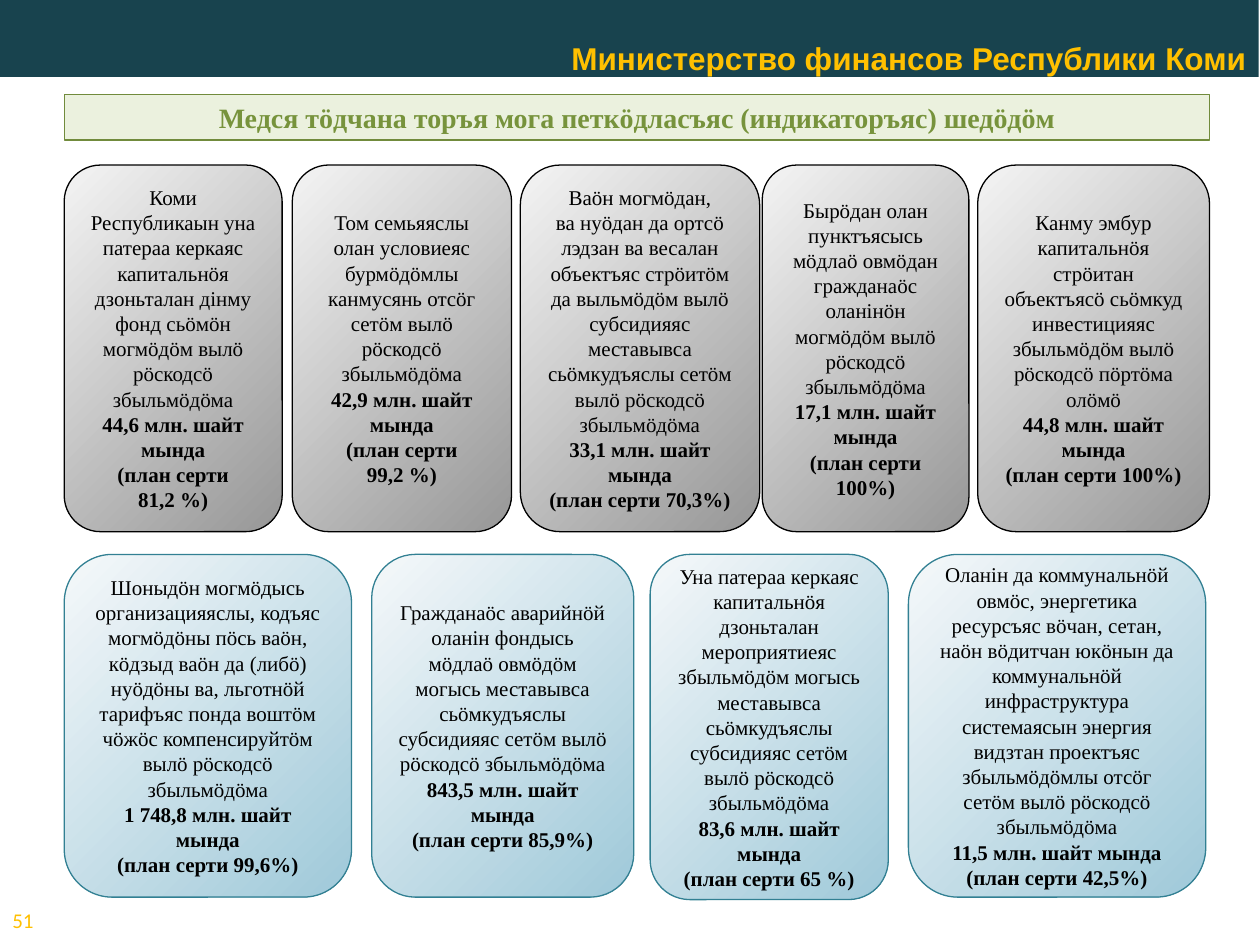
from pptx import Presentation
from pptx.dml.color import RGBColor
from pptx.enum.shapes import MSO_SHAPE
from pptx.enum.text import MSO_ANCHOR, MSO_AUTO_SIZE, PP_ALIGN
from pptx.util import Pt

RECT, ROUND = MSO_SHAPE.RECTANGLE, MSO_SHAPE.ROUNDED_RECTANGLE
MIDDLE, BOTTOM = MSO_ANCHOR.MIDDLE, MSO_ANCHOR.BOTTOM
LEFT, CENTER, RIGHT = PP_ALIGN.LEFT, PP_ALIGN.CENTER, PP_ALIGN.RIGHT

THEME = {
    "band": "18434E",
    "gold": "FFC000",
    "title_fill": "EBF1DE",
    "title_line": "718B3C",
    "title_text": "77933C",
    "text": "000000",
    "gray": ("F4F4F4", "979797", "000000"),
    "blue": ("F5F8FA", "9FC9D9", "328093"),
    "serif": "Times New Roman",
    "sans": "Arial",
    "number": "Calibri",
    "header_size": 18,
    "title_size": 16,
    "body_size": 12,
}


def rgb(name):
    return RGBColor.from_string(THEME.get(name, name))


def write(sp, lines, font, size, color, align, anchor):
    tf = sp.text_frame
    frame = {"word_wrap": True, "auto_size": MSO_AUTO_SIZE.NONE, "vertical_anchor": anchor}
    for key, value in frame.items():
        setattr(tf, key, value)
    for i, (text, bold) in enumerate(lines):
        p = tf.paragraphs[0] if i == 0 else tf.add_paragraph()
        p.alignment = align
        r = p.add_run()
        r.text = text
        for key, value in {"name": THEME[font], "size": Pt(THEME[size]), "bold": bold}.items():
            setattr(r.font, key, value)
        r.font.color.rgb = rgb(color)
    return tf


prs = Presentation()
prs.slide_width, prs.slide_height = Pt(720), Pt(540)
s = prs.slides.add_slide(prs.slide_layouts[5])

sp = s.shapes.add_shape(RECT, Pt(0), Pt(-0.72), Pt(719.28), Pt(44.64))
sp.shadow.inherit = False
sp.fill.solid()
sp.fill.fore_color.rgb = rgb("band")
sp.line.fill.background()
tf = write(sp, [("Министерство финансов Республики Коми", True)],
           "sans", "header_size", "gold", RIGHT, BOTTOM)
tf.margin_bottom = Pt(0)

sp = s.shapes.title
box = {"left": 36.72, "top": 54, "width": 654.48, "height": 26}
for key, value in box.items():
    setattr(sp, key, Pt(value))
sp.fill.solid()
sp.fill.fore_color.rgb = rgb("title_fill")
sp.line.color.rgb = rgb("title_line")
sp.line.width = Pt(0.75)
write(sp, [("Медся тӧдчана торъя мога петкӧдласъяс (индикаторъяс) шедӧдӧм", True)],
      "serif", "title_size", "title_text", CENTER, MIDDLE)

gray_cards = [
    (36.72, 124.56, 209.52,
     ["Коми Республикаын уна патераа керкаяс капитальнӧя дзоньталан дiнму фонд сьӧмӧн "
      "могмӧдӧм вылӧ рӧскодсӧ збыльмӧдӧма"],
     ["44,6 млн. шайт мында", "(план серти", "81,2 %)"]),
    (167.04, 125.28, 209.52,
     ["Том семьяяслы олан условиеяс бурмӧдӧмлы канмусянь отсӧг сетӧм вылӧ рӧскодсӧ "
      "збыльмӧдӧма"],
     ["42,9 млн. шайт мында", "(план серти", "99,2 %)"]),
    (297.36, 136.8, 209.52,
     ["Ваӧн могмӧдан,",
      "ва нуӧдан да ортсӧ лэдзан ва весалан объектъяс стрӧитӧм да выльмӧдӧм вылӧ "
      "субсидияяс меставывса сьӧмкудъяслы сетӧм вылӧ рӧскодсӧ збыльмӧдӧма"],
     ["33,1 млн. шайт мында", "(план серти 70,3%)"]),
    (435.6, 118.08, 209.52,
     ["Бырӧдан олан пунктъясысь мӧдлаӧ овмӧдан гражданаӧс оланiнӧн могмӧдӧм вылӧ "
      "рӧскодсӧ збыльмӧдӧма"],
     ["17,1 млн. шайт мында", "(план серти 100%)"]),
    (558.72, 132.48, 209.52,
     ["Канму эмбур капитальнӧя стрӧитан объектъясӧ сьӧмкуд инвестицияяс збыльмӧдӧм "
      "вылӧ рӧскодсӧ пӧртӧма олӧмӧ"],
     ["44,8 млн. шайт мында", "(план серти 100%)"]),
]
blue_cards = [
    (36.72, 164.16, 195.84,
     ["Шоныдӧн могмӧдысь организацияяслы, кодъяс могмӧдӧны пӧсь ваӧн, кӧдзыд ваӧн да "
      "(либӧ) нуӧдӧны ва, льготнӧй тарифъяс понда воштӧм чӧжӧс компенсируйтӧм вылӧ "
      "рӧскодсӧ збыльмӧдӧма"],
     ["1 748,8 млн. шайт мында", "(план серти 99,6%)"]),
    (212.4, 149.76, 195.84,
     ["Гражданаӧс аварийнӧй оланiн фондысь мӧдлаӧ овмӧдӧм могысь меставывса "
      "сьӧмкудъяслы субсидияяс сетӧм вылӧ рӧскодсӧ збыльмӧдӧма"],
     ["843,5 млн. шайт мында", "(план серти 85,9%)"]),
    (371.52, 136.08, 197.28,
     ["Уна патераа керкаяс капитальнӧя дзоньталан мероприятиеяс збыльмӧдӧм могысь "
      "меставывса сьӧмкудъяслы субсидияяс сетӧм вылӧ рӧскодсӧ збыльмӧдӧма"],
     ["83,6 млн. шайт мында", "(план серти 65 %)"]),
    (519.12, 169.92, 195.84,
     ["Оланiн да коммунальнӧй овмӧс, энергетика ресурсъяс вӧчан, сетан, наӧн вӧдитчан "
      "юкӧнын да коммунальнӧй инфраструктура системаясын энергия видзтан проектъяс "
      "збыльмӧдӧмлы отсӧг сетӧм вылӧ рӧскодсӧ збыльмӧдӧма"],
     ["11,5 млн. шайт мында", "(план серти 42,5%)"]),
]

for top, palette, cards in [(94.32, "gray", gray_cards), (316.8, "blue", blue_cards)]:
    light, dark, outline = THEME[palette]
    for left, width, height, tasks, results in cards:
        sp = s.shapes.add_shape(ROUND, Pt(left), Pt(top), Pt(width), Pt(height))
        sp.shadow.inherit = False
        sp.fill.gradient()
        sp.fill.gradient_angle = 315
        for stop, color, position in zip(sp.fill.gradient_stops, (light, dark), (0, 1)):
            stop.color.rgb = rgb(color)
            stop.position = position
        sp.line.color.rgb = rgb(outline)
        sp.line.width = Pt(0.75)
        lines = [(text, False) for text in tasks] + [(text, True) for text in results]
        write(sp, lines, "serif", "body_size", "text", CENTER, MIDDLE)

sp = s.shapes.add_textbox(Pt(0), Pt(511.2), Pt(30.96), Pt(28.8))
write(sp, [("51", False)], "number", "body_size", "gold", LEFT, MIDDLE)

prs.save("out.pptx")
